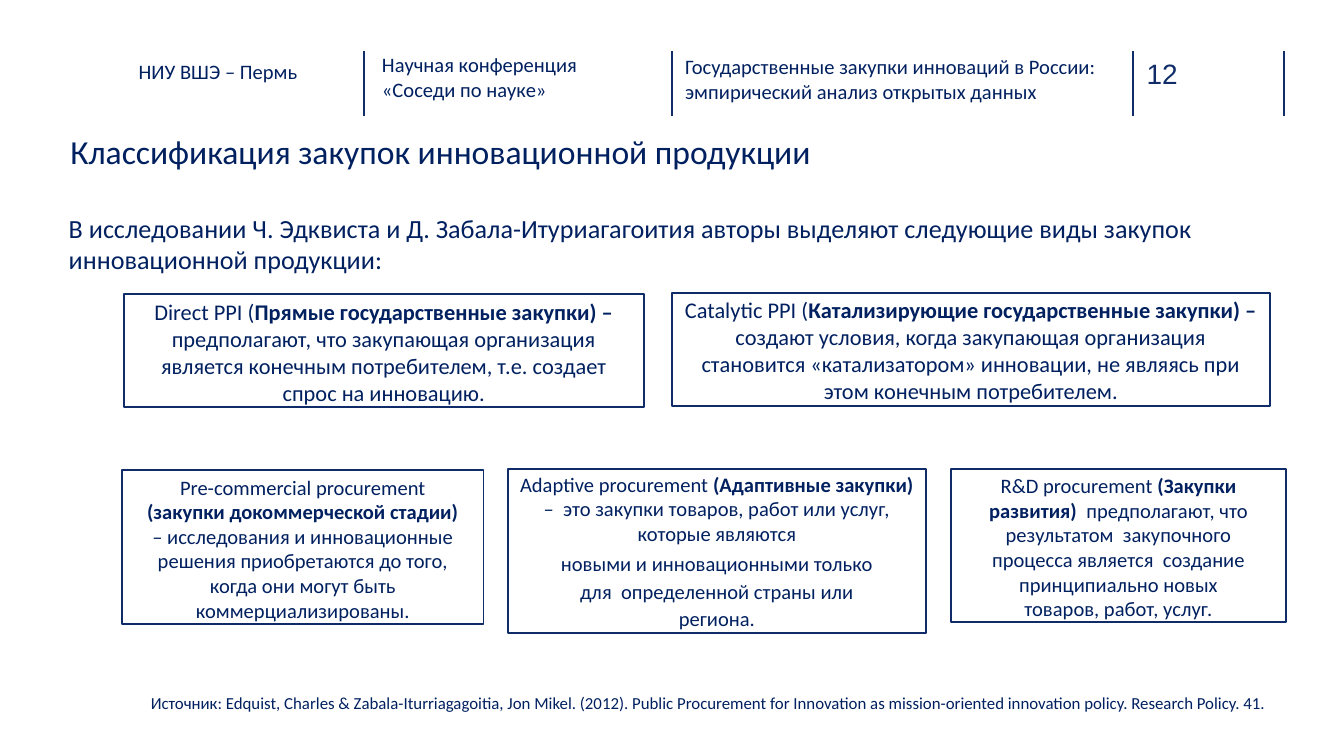
from lxml import etree
from pptx import Presentation
from pptx.dml.color import RGBColor
from pptx.enum.shapes import MSO_CONNECTOR, MSO_SHAPE
from pptx.enum.text import MSO_ANCHOR, MSO_AUTO_SIZE, PP_ALIGN
from pptx.oxml.ns import qn
from pptx.util import Cm, Pt

STRAIGHT = MSO_CONNECTOR.STRAIGHT
RECTANGLE = MSO_SHAPE.RECTANGLE
TOP = MSO_ANCHOR.TOP
FIXED = MSO_AUTO_SIZE.NONE
LEFT, CENTER = PP_ALIGN.LEFT, PP_ALIGN.CENTER
COLORS = {"text": "002060", "border": "0F2C68", "divider": "102D69"}
BLANK_LAYOUT = 6


class SlideBuilder:
    """Holds the shared style and the slide being built."""

    def __init__(self, slide, font="Calibri", line_width=Pt(1)):
        self.slide = slide
        self.font = font
        self.line_width = line_width

    def color(self, name):
        return RGBColor.from_string(COLORS[name])

    def divider(self, left, top=0.97, height=1.22):
        line = self.slide.shapes.add_connector(
            STRAIGHT, Cm(left), Cm(top), Cm(left), Cm(top + height))
        line.line.color.rgb = self.color("divider")
        line.line.width = self.line_width
        etree.SubElement(line._element.spPr, qn("a:effectLst"))

    def set_text(self, shape, paragraphs, size, insets=(0, 0.03), align=LEFT,
                 font=None, color="text"):
        frame = shape.text_frame
        side, top = (Cm(inset) for inset in insets)
        frame_format = {
            "word_wrap": True, "auto_size": FIXED, "vertical_anchor": TOP,
            "margin_left": side, "margin_right": side,
            "margin_top": top, "margin_bottom": 0,
        }
        for name, value in frame_format.items():
            setattr(frame, name, value)
        for index, (spans, layout) in enumerate(paragraphs):
            para = frame.add_paragraph() if index else frame.paragraphs[0]
            layout = dict(layout)
            indent = layout.pop("indent", 0)
            properties = para._p.get_or_add_pPr()
            for name in ("marL", "marR"):
                properties.set(name, str(Cm(indent)))
            for name, value in {"alignment": align, **layout}.items():
                setattr(para, name, value)
            for text, style in spans:
                span = para.add_run()
                span.text = text
                font_format = {"name": font or self.font, "size": Pt(size),
                               "bold": False, **style}
                for name, value in font_format.items():
                    setattr(span.font, name, value)
                span.font.color.rgb = self.color(color)

    def text(self, place, paragraphs, size, **style):
        box = self.slide.shapes.add_textbox(*map(Cm, place))
        self.set_text(box, paragraphs, size, **style)

    def card(self, place, paragraphs, size, top_inset):
        box = self.slide.shapes.add_shape(RECTANGLE, *map(Cm, place))
        box.shadow.inherit = False
        box.fill.background()
        box.line.color.rgb = self.color("border")
        box.line.width = self.line_width
        self.set_text(box, paragraphs, size, (0, top_inset), CENTER)


def plain(text, **layout):
    return [(text, {})], layout


def definition(term, translation, meaning, **layout):
    return [(term, {}), (translation, {"bold": True}), (meaning, {})], layout


def main():
    deck = Presentation()
    deck.slide_width, deck.slide_height = Cm(25.4), Cm(14.29)
    page = SlideBuilder(
        deck.slides.add_slide(deck.slide_layouts[BLANK_LAYOUT]))

    for left in (6.88, 12.7, 21.41, 24.26):
        page.divider(left)
    page.text((21.67, 1.04, 0.99, 0.66), [plain("12")], 15,
              font="Arial", color="divider")

    page.text((1.3, 2.44, 22.02, 2.77), [
        ([("Классификация закупок инновационной продукции",
           {"size": Pt(18)})], {"indent": 0.03}),
        plain("В исследовании Ч. Эдквиста и Д. Забала-Итуриагагоития авторы "
              "выделяют следующие виды закупок инновационной продукции:",
              space_before=Pt(22)),
    ], 14)

    page.card((2.34, 5.56, 9.83, 2.13), [definition(
        "Direct PPI (", "Прямые государственные закупки) – ",
        "предполагают, что закупающая организация является конечным "
        "потребителем, т.е. создает спрос на инновацию.",
        indent=0.56, line_spacing=1.0)], 12, 0.08)
    page.card((12.7, 5.54, 11.3, 2.13), [definition(
        "Catalytic PPI (", "Катализирующие государственные закупки) – ",
        "создают условия, когда закупающая организация становится "
        "«катализатором» инновации, не являясь при этом конечным "
        "потребителем.", indent=0.22, line_spacing=1.01)], 12, 0.05)
    page.card((2.31, 8.89, 6.83, 2.9), [definition(
        "Pre-commercial procurement ", "(закупки докоммерческой стадии) ",
        "– исследования и инновационные решения приобретаются до того, "
        "когда они могут быть коммерциализированы.", indent=0.34)], 11, 0.08)
    page.card((9.6, 8.86, 7.9, 3.1), [
        definition("Adaptive procurement ", "(Адаптивные закупки) ",
                   "–  это закупки товаров, работ или услуг,",
                   indent=0.2, line_spacing=1.01),
        plain("которые являются", indent=0.08),
        plain("новыми и инновационными только для  определенной страны "
              "или региона.", indent=0.79, line_spacing=1.13,
              space_before=Pt(1)),
    ], 11, 0.05)
    page.card((17.98, 8.86, 6.32, 2.9), [definition(
        "R&D procurement ", "(Закупки развития)  ",
        "предполагают, что результатом  закупочного процесса является  "
        "создание принципиально новых товаров, работ, услуг.",
        indent=0.53, line_spacing=1.0)], 11, 0.08)

    page.text((2.82, 13.06, 22.05, 0.41), [plain(
        "Источник: Edquist, Charles & Zabala-Iturriagagoitia, Jon Mikel. "
        "(2012). Public Procurement for Innovation as mission-oriented "
        "innovation policy. Research Policy. 41.", indent=0.03)], 9)

    page.text((7.04, 0.89, 5.26, 1.14), [
        plain("Научная конференция"), plain("«Соседи по науке»")],
        11, insets=(0.18, 0.1))
    page.text((12.7, 0.89, 8.51, 1.19), [
        plain("Государственные закупки инноваций в России:"),
        plain("эмпирический анализ открытых данных")],
        11, insets=(0.25, 0.13))
    page.text((2.62, 1.12, 3.3, 0.97), [plain("НИУ ВШЭ – Пермь")],
              11, insets=(0, 0))

    deck.save("out.pptx")


if __name__ == "__main__":
    main()
